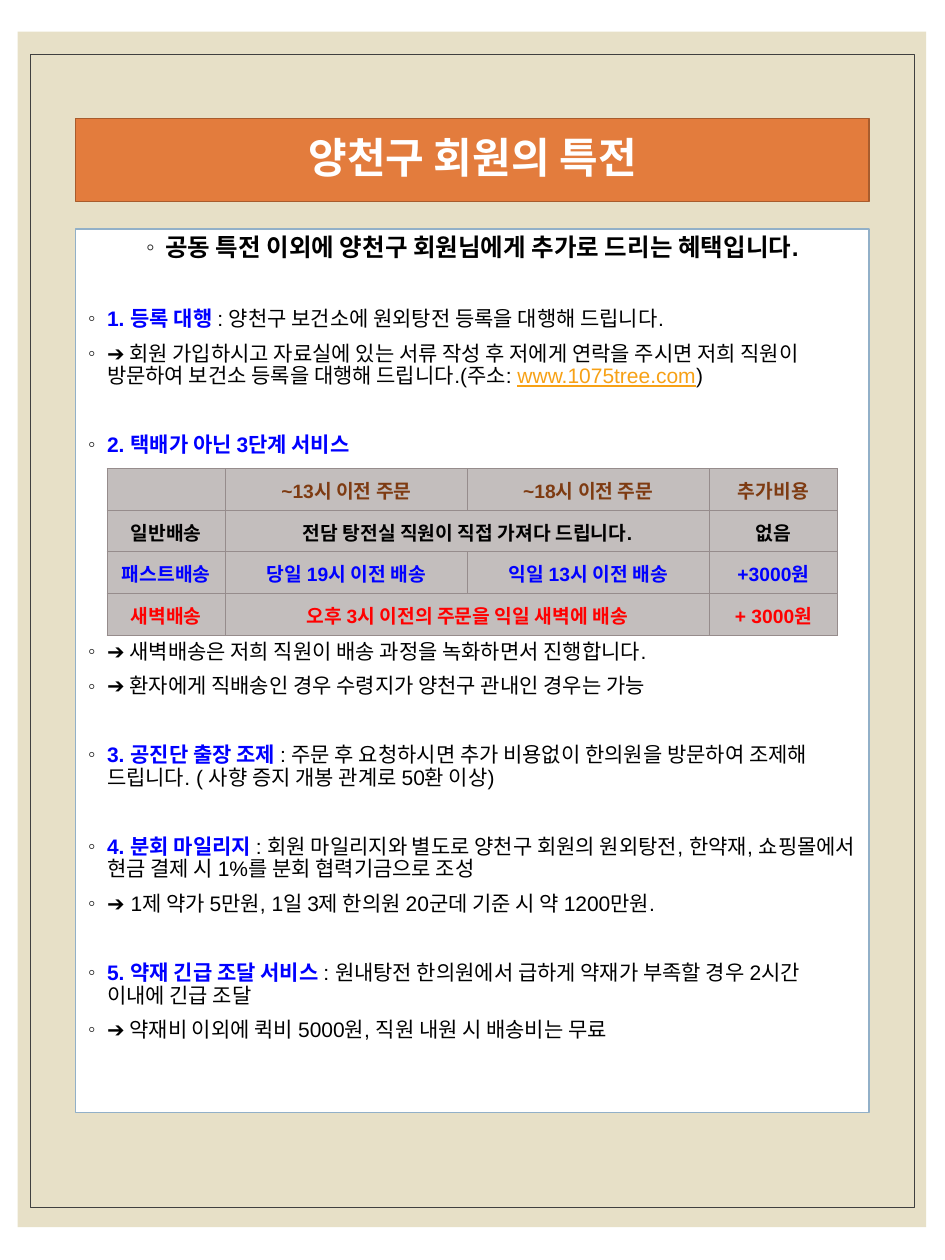
from lxml.etree import SubElement
from pptx import Presentation
from pptx.dml.color import RGBColor
from pptx.enum.shapes import MSO_SHAPE
from pptx.enum.text import MSO_ANCHOR as ANCHOR, MSO_AUTO_SIZE, PP_ALIGN as ALIGN
from pptx.oxml.ns import qn
from pptx.util import Inches, Pt

WHITE = RGBColor(0xFF, 0xFF, 0xFF)
BLACK = RGBColor(0x00, 0x00, 0x00)
BLUE = RGBColor(0x00, 0x00, 0xFF)
RED = RGBColor(0xFF, 0x00, 0x00)
BROWN = RGBColor(0x7E, 0x3B, 0x12)
AMBER = RGBColor(0xF7, 0xA1, 0x15)
SAND = RGBColor(0xE7, 0xE0, 0xC7)
CHARCOAL = RGBColor(0x40, 0x40, 0x40)
ORANGE = RGBColor(0xE3, 0x7C, 0x3D)
RUST = RGBColor(0xA8, 0x5C, 0x2D)
STEEL = RGBColor(0x92, 0xB0, 0xC8)
CELL_GREY = RGBColor(0xC3, 0xBE, 0xBD)
BULLET, BORDER = "262626", "968C8C"

# Content
TITLE = "양천구 회원의 특전"
INTRO = "공동 특전 이외에 양천구 회원님에게 추가로 드리는 혜택입니다."

# Space before a paragraph: next line, new section, below the table
NEXT, SECTION, BELOW_TABLE = 6.8, 26.4, 105.2

# Each item: space before, then runs of (style, text)
ITEMS = [
    (SECTION, [("head", "1. 등록 대행 "),
               ("plain", ": 양천구 보건소에 원외탕전 등록을 대행해 드립니다.")]),
    (NEXT, [("plain", "➔ 회원 가입하시고 자료실에 있는 서류 작성 후 저에게 연락을 주시면 "
                      "저희 직원이 방문하여 보건소 등록을 대행해 드립니다.(주소: "),
            ("link", "www.1075tree.com"), ("plain", ")")]),
    (SECTION, [("head", "2. 택배가 아닌 3단계 서비스")]),
    (BELOW_TABLE, [("plain", "➔ 새벽배송은 저희 직원이 배송 과정을 녹화하면서 진행합니다.")]),
    (NEXT, [("plain", "➔ 환자에게 직배송인 경우 수령지가 양천구 관내인 경우는 가능")]),
    (SECTION, [("head", "3. 공진단 출장 조제 "),
               ("plain", ": 주문 후 요청하시면 추가 비용없이 한의원을 방문하여 조제해 "
                         "드립니다. ( 사향 증지 개봉 관계로 50환 이상)")]),
    (SECTION, [("head", "4. 분회 마일리지 "),
               ("plain", ": 회원 마일리지와 별도로 양천구 회원의 원외탕전, 한약재, "
                         "쇼핑몰에서 현금 결제 시 1%를 분회 협력기금으로 조성")]),
    (NEXT, [("plain", "➔ 1제 약가 5만원, 1일 3제 한의원 20군데 기준 시 약 1200만원.")]),
    (SECTION, [("head", "5. 약재 긴급 조달 서비스 "),
               ("plain", ": 원내탕전 한의원에서 급하게 약재가 부족할 경우 2시간 "
                         "이내에 긴급 조달")]),
    (NEXT, [("plain", "➔ 약재비 이외에 퀵비 5000원, 직원 내원 시 배송비는 무료")]),
]
STYLES = {  # size, colour, bold, underline
    "intro": (14, BLACK, True, False),
    "head": (12, BLUE, True, False),
    "plain": (12, BLACK, False, False),
    "link": (12, AMBER, False, True),
}

# Delivery table: row colour, then cells; None joins the cell on its left
DELIVERY = [
    (BROWN, ["", "~13시 이전 주문", "~18시 이전 주문", "추가비용"]),
    (BLACK, ["일반배송", "전담 탕전실 직원이 직접 가져다 드립니다.", None, "없음"]),
    (BLUE, ["패스트배송", "당일 19시 이전 배송", "익일 13시 이전 배송", "+3000원"]),
    (RED, ["새벽배송", "오후 3시 이전의 주문을 익일 새벽에 배송", None, "+ 3000원"]),
]
COLS, ROW = [0.94, 1.92, 1.92, 1.02], 0.33


def place(sp, left, top, width, height):
    sp.left, sp.top = Inches(left), Inches(top)
    sp.width, sp.height = Inches(width), Inches(height)


def paint(sp, fill, line, weight):
    if fill is None:
        sp.fill.background()
    else:
        sp.fill.solid()
        sp.fill.fore_color.rgb = fill
    if line is None:
        sp.line.fill.background()
    else:
        sp.line.color.rgb = line
        sp.line.width = Pt(weight)


def add_run(p, text, size, color, bold, underline=False, font="Arial"):
    r = p.add_run()
    r.text = text
    r.font.name, r.font.size = font, Pt(size)
    r.font.bold, r.font.underline = bold, underline
    r.font.color.rgb = color


def add_solid(parent, color):
    SubElement(SubElement(parent, qn("a:solidFill")), qn("a:srgbClr"), val=color)


def add_item(p, before, runs):
    pPr = p._p.get_or_add_pPr()
    pPr.set("marL", str(Inches(0.15)))
    pPr.set("indent", str(-Inches(0.15)))
    SubElement(SubElement(pPr, qn("a:buClr")), qn("a:srgbClr"), val=BULLET)
    SubElement(pPr, qn("a:buChar"), char="◦")
    p.line_spacing, p.space_before, p.space_after = 0.9, Pt(before), Pt(0)
    for style, text in runs:
        add_run(p, text, *STYLES[style])


def style_cell(cell):
    cell.margin_left = cell.margin_right = cell.margin_top = Inches(0.01)
    cell.margin_bottom = 0
    cell.vertical_anchor = ANCHOR.MIDDLE
    tcPr = cell._tc.get_or_add_tcPr()
    for side in ("lnL", "lnR", "lnT", "lnB"):
        add_solid(SubElement(tcPr, qn("a:" + side), w=str(Pt(0.5))), BORDER)
    cell.fill.solid()
    cell.fill.fore_color.rgb = CELL_GREY


prs = Presentation()
prs.slide_width, prs.slide_height = Inches(7.5), Inches(10)
s = prs.slides.add_slide(prs.slide_layouts[1])
title, body = s.placeholders

# Backdrop and thin frame, behind the placeholders
for box, fill, line in [((0.14, 0.25, 7.21, 9.49), SAND, None),
                        ((0.24, 0.43, 7.02, 9.15), None, CHARCOAL)]:
    sp = s.shapes.add_shape(MSO_SHAPE.RECTANGLE, *map(Inches, box))
    sp.shadow.inherit = False
    paint(sp, fill, line, 0.5)
    title._element.addprevious(sp._element)

# Title bar
place(title, 0.6, 0.94, 6.3, 0.66)
paint(title, ORANGE, RUST, 1)
tf = title.text_frame
tf.auto_size, tf.vertical_anchor = MSO_AUTO_SIZE.NONE, ANCHOR.MIDDLE
p = tf.paragraphs[0]
p.alignment, p.line_spacing = ALIGN.CENTER, 0.9
add_run(p, TITLE, 24, WHITE, True, font="Times New Roman")

# Benefits list
place(body, 0.6, 1.82, 6.3, 7.01)
paint(body, WHITE, STEEL, 1)
tf = body.text_frame
tf.auto_size, tf.vertical_anchor = MSO_AUTO_SIZE.NONE, ANCHOR.TOP
add_item(tf.paragraphs[0], 0, [("intro", INTRO)])
tf.paragraphs[0].alignment = ALIGN.CENTER
for before, runs in ITEMS:
    add_item(tf.add_paragraph(), before, runs)

# Delivery table
table = s.shapes.add_table(len(DELIVERY), len(COLS), Inches(0.85), Inches(3.72),
                           Inches(sum(COLS)), Inches(ROW * len(DELIVERY))).table
for col, width in zip(table.columns, COLS):
    col.width = Inches(width)
for i, (color, texts) in enumerate(DELIVERY):
    table.rows[i].height = Inches(ROW)
    for j, text in enumerate(texts):
        cell = table.cell(i, j)
        style_cell(cell)
        if text is None:
            table.cell(i, j - 1).merge(cell)
        elif text:
            p = cell.text_frame.paragraphs[0]
            p.alignment = ALIGN.CENTER
            add_run(p, text, 11, color, True)

prs.save("out.pptx")
